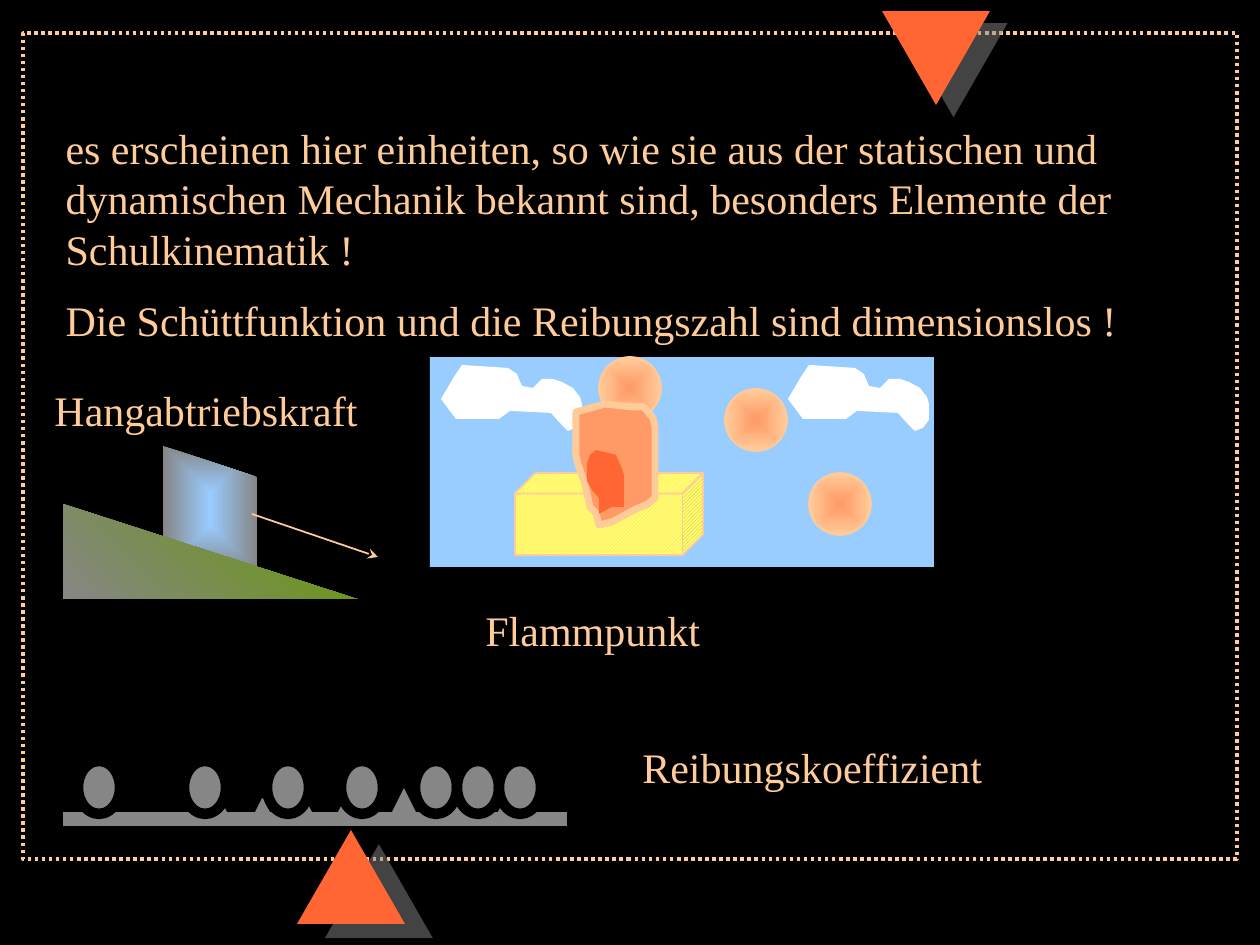
from dataclasses import dataclass

from lxml.etree import SubElement
from pptx import Presentation
from pptx.dml.color import RGBColor
from pptx.enum.dml import MSO_LINE, MSO_PATTERN
from pptx.enum.shapes import MSO_CONNECTOR, MSO_SHAPE
from pptx.enum.text import MSO_ANCHOR
from pptx.oxml import parse_xml
from pptx.oxml.ns import nsdecls, qn
from pptx.util import Pt

PX = 914400 // 126  # EMU in one pixel


@dataclass(frozen=True)
class Theme:
    font: str = "Times New Roman"
    text_size: int = 24
    background: str = "000000"
    peach: str = "FFCC99"
    orange: str = "FF6633"
    salmon: str = "FF9966"
    gray: str = "868686"
    sky: str = "99CCFF"
    green: str = "669900"
    yellow: str = "FFFF66"
    white: str = "FFFFFF"


theme = Theme()


def box(*pixels):
    return [value * PX for value in pixels]


def paint(shape, fill=None, line=None, width=1):
    """Fill with one colour, or with a gradient when given a pair of colours."""
    shape.shadow.inherit = False
    if fill is None:
        shape.fill.background()
    elif isinstance(fill, tuple):
        shape.fill.gradient()
        shape.fill.gradient_angle = 45
        for stop, color in zip(shape.fill.gradient_stops, fill):
            stop.color.rgb = RGBColor.from_string(color)
    else:
        shape.fill.solid()
        shape.fill.fore_color.rgb = RGBColor.from_string(fill)
    if line is None:
        shape.line.fill.background()
    else:
        shape.line.color.rgb = RGBColor.from_string(line)
        shape.line.width = Pt(width)


presentation = Presentation()
presentation.slide_width, presentation.slide_height = box(1260, 945)
slide = presentation.slides.add_slide(presentation.slide_layouts[1])
shapes = slide.shapes
slide.background.fill.solid()
slide.background.fill.fore_color.rgb = RGBColor.from_string(theme.background)
title = shapes.title
title.element.getparent().remove(title.element)

# Dotted frame
frame = shapes.add_shape(MSO_SHAPE.RECTANGLE, *box(23, 33, 1214, 826))
paint(frame, line=theme.peach, width=2)
frame.line.dash_style = MSO_LINE.ROUND_DOT

# Corner triangles: left, top, rotation, shadow distance (pt), shadow angle
for left, top, rotation, distance, angle in [(882, 11, 180, 12.2, 35), (297, 830, 0, 17.9, 27)]:
    triangle = shapes.add_shape(MSO_SHAPE.ISOSCELES_TRIANGLE, *box(left, top, 108, 94))
    triangle.rotation = rotation
    paint(triangle, theme.orange)
    effects = triangle.element.spPr.find(qn("a:effectLst"))
    effects.append(parse_xml(
        f'<a:outerShdw {nsdecls("a")} dist="{int(Pt(distance))}" dir="{angle * 60000}" '
        f'algn="ctr" rotWithShape="0"><a:srgbClr val="{theme.gray}">'
        '<a:alpha val="50000"/></a:srgbClr></a:outerShdw>'))

# Sky
paint(shapes.add_shape(MSO_SHAPE.RECTANGLE, *box(430, 357, 504, 210)), theme.sky)

# Block on the slope
block = shapes.add_shape(MSO_SHAPE.PARALLELOGRAM, *box(147, 462, 126, 94))
block.rotation = 90
block.adjustments[0] = 0.33
paint(block, (theme.sky, theme.gray))
centered = [block]
slope = shapes.add_shape(MSO_SHAPE.RIGHT_TRIANGLE, *box(63, 504, 294, 95))
paint(slope, (theme.gray, theme.green))

# Fuel box and sparks
fuel = shapes.add_shape(MSO_SHAPE.CUBE, *box(515, 473, 188, 82))
paint(fuel, theme.yellow, theme.peach)
fuel.fill.patterned()
fuel.fill.pattern = MSO_PATTERN.LIGHT_UPWARD_DIAGONAL
fuel.fill.fore_color.rgb = RGBColor.from_string(theme.peach)
fuel.fill.back_color.rgb = RGBColor.from_string(theme.yellow)
for left, top in [(809, 473), (725, 389), (599, 357)]:
    spark = shapes.add_shape(MSO_SHAPE.OVAL, *box(left, top, 62, 62))
    paint(spark, (theme.salmon, theme.peach), theme.peach)
    centered.append(spark)

# Gradients that spread from the centre
for shape in centered:
    gradient = shape.element.spPr.find(qn("a:gradFill"))
    gradient.remove(gradient.find(qn("a:lin")))
    spread = SubElement(gradient, qn("a:path"), {"path": "shape"})
    SubElement(spread, qn("a:fillToRect"), dict.fromkeys("ltrb", "50000"))

# Clouds and flame
cloud = [(441, 399), (454, 377), (462, 365), (508, 368), (517, 374), (522, 386),
         (533, 388), (542, 379), (553, 379), (562, 382), (573, 388), (580, 397),
         (582, 404), (582, 420), (576, 428), (568, 431), (559, 422), (551, 413),
         (510, 411), (499, 419), (456, 419)]
flame = [(599, 525), (596, 513), (590, 507), (585, 484), (578, 464), (576, 455),
         (576, 412), (605, 404), (633, 407), (644, 407), (653, 418), (655, 427),
         (655, 498), (648, 504), (636, 509), (612, 522)]
flame_core = [(599, 514), (599, 498), (592, 490), (587, 481), (587, 464), (590, 455),
              (596, 450), (616, 455), (621, 466), (624, 475), (624, 507), (612, 507)]
second_cloud = [(x + 347, y) for x, y in cloud]
for points, fill, line in [(second_cloud, theme.white, None), (cloud, theme.white, None),
                           (flame, theme.salmon, theme.peach),
                           (flame_core, theme.orange, None)]:
    builder = shapes.build_freeform(*points[0], scale=PX)
    builder.add_line_segments(points[1:], close=True)
    paint(builder.convert_to_shape(), fill, line, 4)

# Force arrow and friction surface
arrow = shapes.add_connector(MSO_CONNECTOR.STRAIGHT, *box(252, 514, 378, 557))
surface = shapes.add_connector(MSO_CONNECTOR.STRAIGHT, *box(63, 819, 567, 819))
for connector, color, width in [(arrow, theme.peach, 1), (surface, theme.gray, 8)]:
    connector.line.color.rgb = RGBColor.from_string(color)
    connector.line.width = Pt(width)
    SubElement(connector.element.spPr, qn("a:effectLst"))
SubElement(arrow.line._get_or_add_ln(), qn("a:tailEnd"), {"type": "stealth"})

# Surface teeth: small outlined ones, then large ones
for lefts, top, size, line in [((210, 253, 295, 336), 799, 19, theme.gray),
                               ((388, 441, 494), 788, 32, None)]:
    for left in lefts:
        tooth = shapes.add_shape(MSO_SHAPE.ISOSCELES_TRIANGLE, *box(left, top, size, size))
        paint(tooth, theme.gray, line)

# Grains on the surface
for left in (78, 184, 267, 341, 415, 457, 499):
    grain = shapes.add_shape(MSO_SHAPE.OVAL, *box(left, 761, 42, 53))
    paint(grain, theme.gray, theme.background, 6)

# Body text and captions
body = slide.placeholders[1]
body.left, body.top, body.width, body.height = box(53, 116, 1144, 239)
body.text_frame.text = (
    "es erscheinen hier einheiten, so wie sie aus der statischen und dynamischen "
    "Mechanik bekannt sind, besonders Elemente der Schulkinematik !\n"
    "Die Schüttfunktion und die Reibungszahl sind dimensionslos !")
text_shapes = [body]
for caption, left, top, width in [("Hangabtriebskraft", 42, 378, 410),
                                  ("Flammpunkt", 473, 598, 410),
                                  ("Reibungskoeffizient", 630, 735, 514)]:
    text_box = shapes.add_textbox(*box(left, top, width, 63))
    text_box.text_frame.text = caption
    text_shapes.append(text_box)
for shape in text_shapes:
    shape.text_frame.word_wrap = True
    shape.text_frame.vertical_anchor = MSO_ANCHOR.TOP
    for paragraph in shape.text_frame.paragraphs:
        paragraph.space_before = Pt(theme.text_size / 2)
        properties = paragraph._p.get_or_add_pPr()
        properties.set("marL", "0")
        properties.set("indent", "0")
        SubElement(properties, qn("a:buNone"))
        font = paragraph.runs[0].font
        font.name, font.size = theme.font, Pt(theme.text_size)
        font.color.rgb = RGBColor.from_string(theme.peach)

presentation.save("out.pptx")
